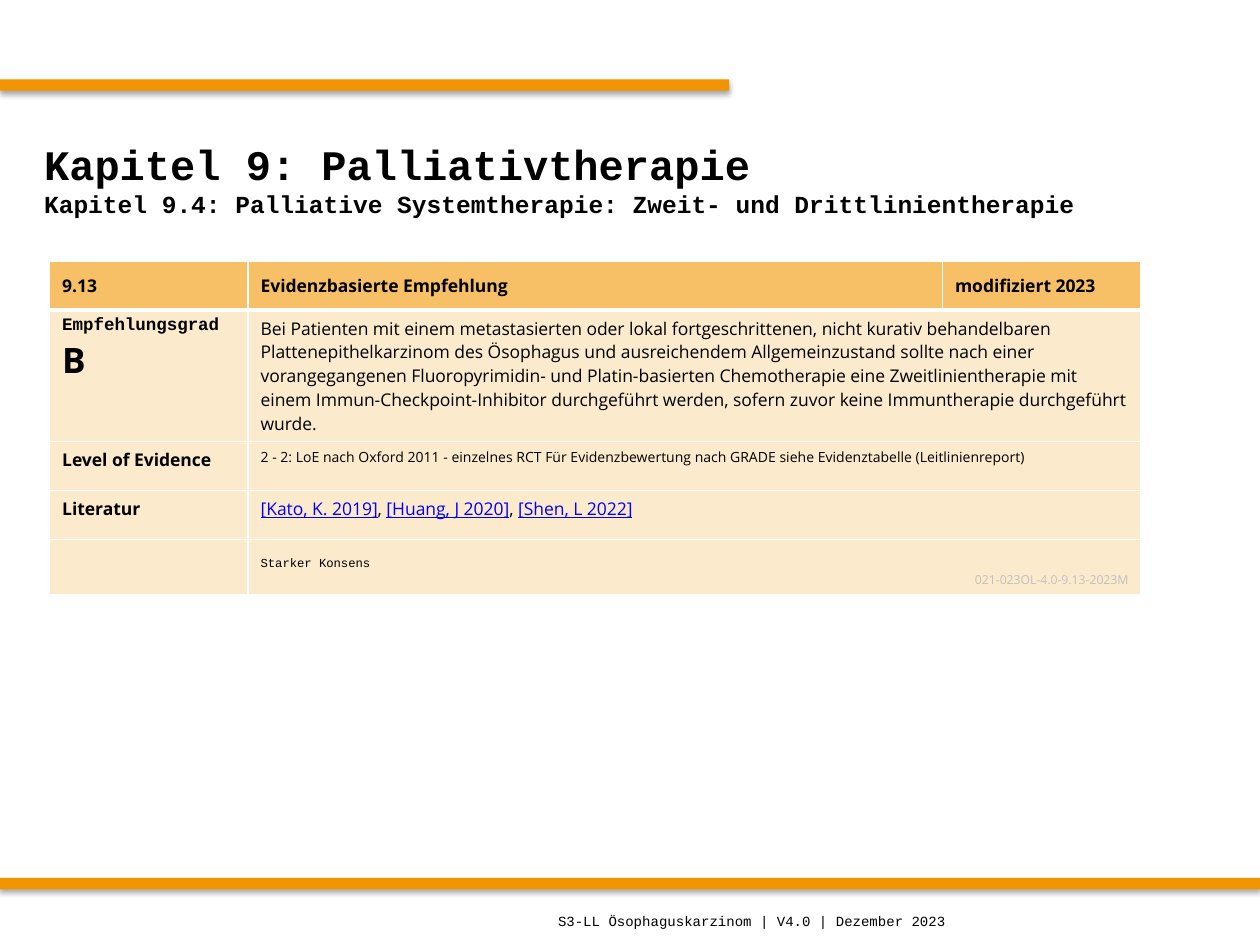
from lxml.etree import SubElement
from pptx import Presentation
from pptx.dml.color import RGBColor
from pptx.enum.shapes import MSO_SHAPE
from pptx.enum.text import MSO_ANCHOR, PP_ALIGN
from pptx.oxml.ns import qn
from pptx.util import Cm, Pt

ORANGE = RGBColor(0xF2, 0x94, 0x00)
HEADER_FILL = RGBColor(0xF7, 0xBF, 0x66)
BODY_FILL = RGBColor(0xFC, 0xEA, 0xCC)
BLACK = RGBColor(0x00, 0x00, 0x00)
LINK_BLUE = RGBColor(0x00, 0x00, 0xFF)
CODE_GREY = RGBColor(0xBF, 0xBF, 0xBF)
WHITE = RGBColor(0xFF, 0xFF, 0xFF)
MONO, SANS = "Courier New", "Open Sans"


def run(text, size=10, font=SANS, color=BLACK, bold=False, underline=False):
    return text, size, font, color, bold, underline


def label(text, size=10, font=SANS):
    return [run(text, size, font, bold=True)]


def reference(text):
    return run(text, color=LINK_BLUE, underline=True)


# Content: a text is a list of paragraphs, a paragraph is a list of runs
TITLE = [
    label("Kapitel 9: Palliativtherapie", 24, MONO),
    label("Kapitel 9.4: Palliative Systemtherapie: Zweit- und Drittlinientherapie", 14, MONO),
]
FOOTER = [[run("S3-LL Ösophaguskarzinom | V4.0 | Dezember 2023", 8, MONO)]]
RECOMMENDATION = (
    "Bei Patienten mit einem metastasierten oder lokal fortgeschrittenen, nicht kurativ "
    "behandelbaren Plattenepithelkarzinom des Ösophagus und ausreichendem Allgemeinzustand "
    "sollte nach einer vorangegangenen Fluoropyrimidin- und Platin-basierten Chemotherapie "
    "eine Zweitlinientherapie mit einem Immun-Checkpoint-Inhibitor durchgeführt werden, "
    "sofern zuvor keine Immuntherapie durchgeführt wurde."
)
EVIDENCE = (
    "2 - 2: LoE nach Oxford 2011 - einzelnes RCT Für Evidenzbewertung nach GRADE "
    "siehe Evidenztabelle (Leitlinienreport)"
)
ROWS = [
    [[label("9.13")], [label("Evidenzbasierte Empfehlung")], [label("modifiziert 2023")]],
    [[label("Empfehlungsgrad", font=MONO), label("B", 20)], [[run(RECOMMENDATION)]]],
    [[label("Level of Evidence")], [[run(EVIDENCE, 8)]]],
    [
        [label("Literatur")],
        [[
            reference("[Kato, K. 2019]"), run(", "),
            reference("[Huang, J 2020]"), run(", "),
            reference("[Shen, L 2022]"),
        ]],
    ],
    [[], [[run("Starker Konsens", 7, MONO)],
          [run("021-023OL-4.0-9.13-2023M", 7, color=CODE_GREY)]]],
]
COLUMN_WIDTHS = [4, 14, 4]
ROW_HEIGHTS = [0.99, 2.65, 0.99, 0.99, 1.1]
BARS = [(1.6, 14.7), (17.7, 25.4)]  # top, width


def write(text_frame, paragraphs):
    for index, runs in enumerate(paragraphs):
        paragraph = text_frame.paragraphs[0] if index == 0 else text_frame.add_paragraph()
        for text, size, font, color, bold, underline in runs:
            part = paragraph.add_run()
            part.text = text
            part.font.size = Pt(size)
            part.font.name = font
            part.font.color.rgb = color
            part.font.bold = bold
            part.font.underline = underline


def add_text(slide, left, top, width, height, paragraphs):
    text_frame = slide.shapes.add_textbox(Cm(left), Cm(top), Cm(width), Cm(height)).text_frame
    text_frame.word_wrap = True
    text_frame.vertical_anchor = MSO_ANCHOR.MIDDLE
    write(text_frame, paragraphs)


def add_bar(slide, top, width):
    bar = slide.shapes.add_shape(MSO_SHAPE.RECTANGLE, 0, Cm(top), Cm(width), Cm(0.23))
    bar.fill.solid()
    bar.fill.fore_color.rgb = ORANGE
    bar.line.fill.background()
    bar.shadow.inherit = False
    effects = bar.element.spPr.find(qn("a:effectLst"))
    shadow = SubElement(effects, qn("a:outerShdw"), blurRad=str(Pt(3.1)), dist=str(Pt(1.8)),
                        dir="5400000", rotWithShape="0")
    color = SubElement(shadow, qn("a:srgbClr"), val=str(BLACK))
    SubElement(color, qn("a:alpha"), val="35000")


def style_cell(cell, fill, bottom_width):
    properties = cell._tc.get_or_add_tcPr()
    for side, width in (("lnL", 1), ("lnR", 1), ("lnT", 1), ("lnB", bottom_width)):
        line = SubElement(properties, qn(f"a:{side}"), w=str(Pt(width)))
        SubElement(SubElement(line, qn("a:solidFill")), qn("a:srgbClr"), val=str(WHITE))
    cell.fill.solid()
    cell.fill.fore_color.rgb = fill


def add_recommendation_table(slide):
    table = slide.shapes.add_table(
        len(ROWS), len(COLUMN_WIDTHS), Cm(1), Cm(5.26),
        Cm(sum(COLUMN_WIDTHS)), Cm(sum(ROW_HEIGHTS)),
    ).table
    table.first_row = table.horz_banding = False
    for column, width in zip(table.columns, COLUMN_WIDTHS):
        column.width = Cm(width)
    for row_index, texts in enumerate(ROWS):
        table.rows[row_index].height = Cm(ROW_HEIGHTS[row_index])
        is_header = row_index == 0
        for column_index in range(len(COLUMN_WIDTHS)):
            cell = table.cell(row_index, column_index)
            style_cell(cell, HEADER_FILL if is_header else BODY_FILL, 3 if is_header else 1)
            if is_header:
                cell.vertical_anchor = MSO_ANCHOR.MIDDLE
        if not is_header:
            table.cell(row_index, 1).merge(table.cell(row_index, 2))
        for column_index, paragraphs in enumerate(texts):
            write(table.cell(row_index, column_index).text_frame, paragraphs)
    # Consensus sits at the bottom, its code on the right
    consensus = table.cell(len(ROWS) - 1, 1)
    consensus.vertical_anchor = MSO_ANCHOR.BOTTOM
    consensus.text_frame.paragraphs[-1].alignment = PP_ALIGN.RIGHT


def main():
    presentation = Presentation()
    presentation.slide_width, presentation.slide_height = Cm(25.4), Cm(19.05)
    slide = presentation.slides.add_slide(presentation.slide_layouts[6])
    for top, width in BARS:
        add_bar(slide, top, width)
    add_text(slide, 0.64, 2.11, 24.13, 2.97, TITLE)
    add_recommendation_table(slide)
    add_text(slide, 11, 18.06, 14, 0.99, FOOTER)
    presentation.save("out.pptx")


if __name__ == "__main__":
    main()
